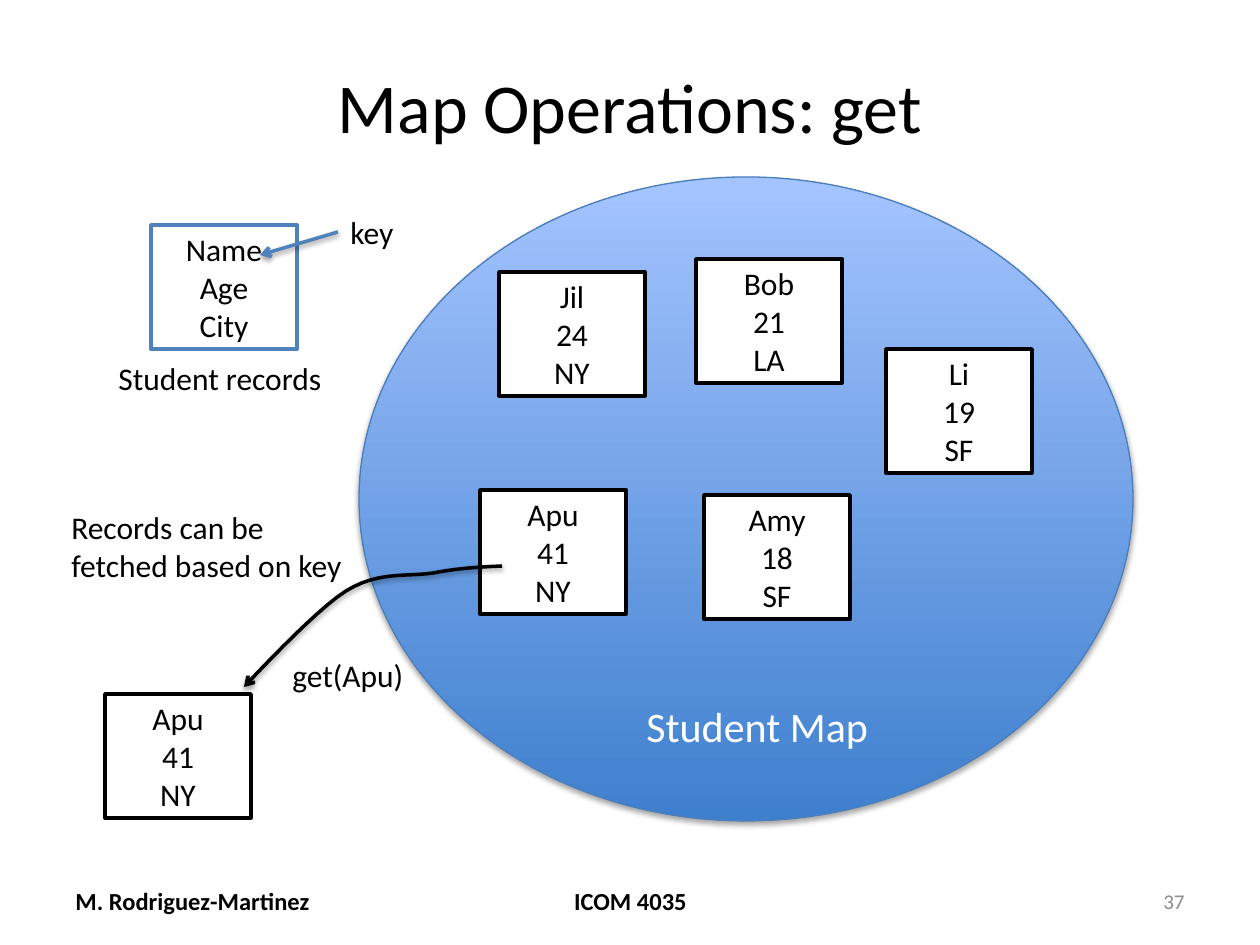
from lxml.etree import SubElement
from pptx import Presentation
from pptx.dml.color import RGBColor
from pptx.enum.shapes import MSO_CONNECTOR, MSO_SHAPE
from pptx.enum.text import MSO_ANCHOR, MSO_AUTO_SIZE, PP_ALIGN
from pptx.oxml.ns import qn
from pptx.util import Pt

PX = 914400 / 126
C = {"black": "000000", "white": "FFFFFF", "blue": "4F81BD", "grey": "8C8C8C",
     "rim": "4B7EBC", "deep": "3F80CE", "pale": "A4C4FF"}
LEFT, CENTER, RIGHT = PP_ALIGN.LEFT, PP_ALIGN.CENTER, PP_ALIGN.RIGHT


def write(tf, lines, size, color, align, bold=False):
    for i, line in enumerate(lines):
        p = tf.paragraphs[0] if i == 0 else tf.add_paragraph()
        p.alignment = align
        r = p.add_run()
        r.text = line
        r.font.name = "Calibri"
        r.font.size = Pt(size)
        r.font.bold = bold
        r.font.color.rgb = RGBColor.from_string(C[color])


def finish(sp, color, width, dist, alpha, arrow):
    sp.line.color.rgb = RGBColor.from_string(C[color])
    sp.line.width = Pt(width)
    pr = sp._element.spPr
    if arrow:
        SubElement(pr.find(qn("a:ln")), qn("a:tailEnd"), type="arrow")
    for old in pr.findall(qn("a:effectLst")):
        pr.remove(old)
    effects = SubElement(pr, qn("a:effectLst"))
    shadow = SubElement(effects, qn("a:outerShdw"), blurRad=str(Pt(3.1)),
                        dist=str(Pt(dist)), dir="5400000", rotWithShape="0")
    clr = SubElement(shadow, qn("a:srgbClr"), val=C["black"])
    SubElement(clr, qn("a:alpha"), val=str(alpha * 1000))


prs = Presentation()
prs.slide_width, prs.slide_height = round(1260 * PX), round(945 * PX)
s = prs.slides.add_slide(prs.slide_layouts[6])

box = [round(v * PX) for v in (359, 177, 774, 644)]
oval = s.shapes.add_shape(MSO_SHAPE.OVAL, *box)
oval.fill.gradient()
oval.fill.gradient_angle = 90
for stop, name in zip(oval.fill.gradient_stops, ("deep", "pale")):
    stop.color.rgb = RGBColor.from_string(C[name])
finish(oval, "rim", 0.75, 1.8, 35, False)

for x, y, w, h, text, size, color, align, bold in [
    (63, 38, 1134, 135, "Map Operations: get", 40, "black", CENTER, False),
    (63, 876, 294, 50, "M. Rodriguez-Martinez", 14, "black", LEFT, True),
    (431, 876, 399, 50, "ICOM 4035", 14, "black", CENTER, True),
    (903, 876, 294, 50, "37", 12, "grey", RIGHT, False),
]:
    tf = s.shapes.add_textbox(*[round(v * PX) for v in (x, y, w, h)]).text_frame
    tf.word_wrap = True
    tf.vertical_anchor = MSO_ANCHOR.MIDDLE
    write(tf, [text], size, color, align, bold)

for x, y, line, record in [
    (499, 272, "black", ("Jil", "24", "NY")),
    (151, 225, "blue", ("Name", "Age", "City")),
    (696, 259, "black", ("Bob", "21", "LA")),
    (480, 490, "black", ("Apu", "41", "NY")),
    (704, 495, "black", ("Amy", "18", "SF")),
    (886, 349, "black", ("Li", "19", "SF")),
    (105, 694, "black", ("Apu", "41", "NY")),
]:
    box = [round(v * PX) for v in (x, y, 146, 124)]
    sp = s.shapes.add_shape(MSO_SHAPE.RECTANGLE, *box)
    sp.shadow.inherit = False
    sp.fill.solid()
    sp.fill.fore_color.rgb = RGBColor.from_string(C["white"])
    sp.line.color.rgb = RGBColor.from_string(C[line])
    sp.line.width = Pt(2)
    sp.text_frame.vertical_anchor = MSO_ANCHOR.MIDDLE
    write(sp.text_frame, record, 18, "black", CENTER)

for x, y, w, h, lines, size, color in [
    (106, 353, 232, 50, ["Student records"], 18, "black"),
    (634, 694, 249, 63, ["Student Map"], 24, "white"),
    (59, 502, 301, 89, ["Records can be", "fetched based on key"], 18, "black"),
    (338, 207, 71, 50, ["key"], 18, "black"),
    (280, 650, 139, 50, ["get(Apu)"], 18, "black"),
]:
    tf = s.shapes.add_textbox(*[round(v * PX) for v in (x, y, w, h)]).text_frame
    tf.word_wrap = False
    tf.auto_size = MSO_AUTO_SIZE.SHAPE_TO_FIT_TEXT
    write(tf, lines, size, color, LEFT)

bends = [(502, 566), (480, 567), (459, 568), (433, 573), (407, 577),
         (378, 571), (346, 591), (315, 610), (244, 687), (244, 687)]
curve = []
for k in range(0, 9, 3):
    for step in range(1, 13):
        t = step / 12
        weights = ((1 - t) ** 3, 3 * t * (1 - t) ** 2, 3 * t * t * (1 - t), t ** 3)
        curve.append([round(PX * sum(b * pt[axis] for b, pt in zip(weights, bends[k:k + 4])))
                      for axis in (0, 1)])
fb = s.shapes.build_freeform(*[round(v * PX) for v in bends[0]])
fb.add_line_segments(curve, close=False)
fetch = fb.convert_to_shape()
fetch.fill.background()
finish(fetch, "black", 2, 1.6, 38, True)

ends = [round(v * PX) for v in (338, 232, 260, 255)]
key_arrow = s.shapes.add_connector(MSO_CONNECTOR.STRAIGHT, *ends)
finish(key_arrow, "blue", 2, 1.6, 38, True)

prs.save("out.pptx")
